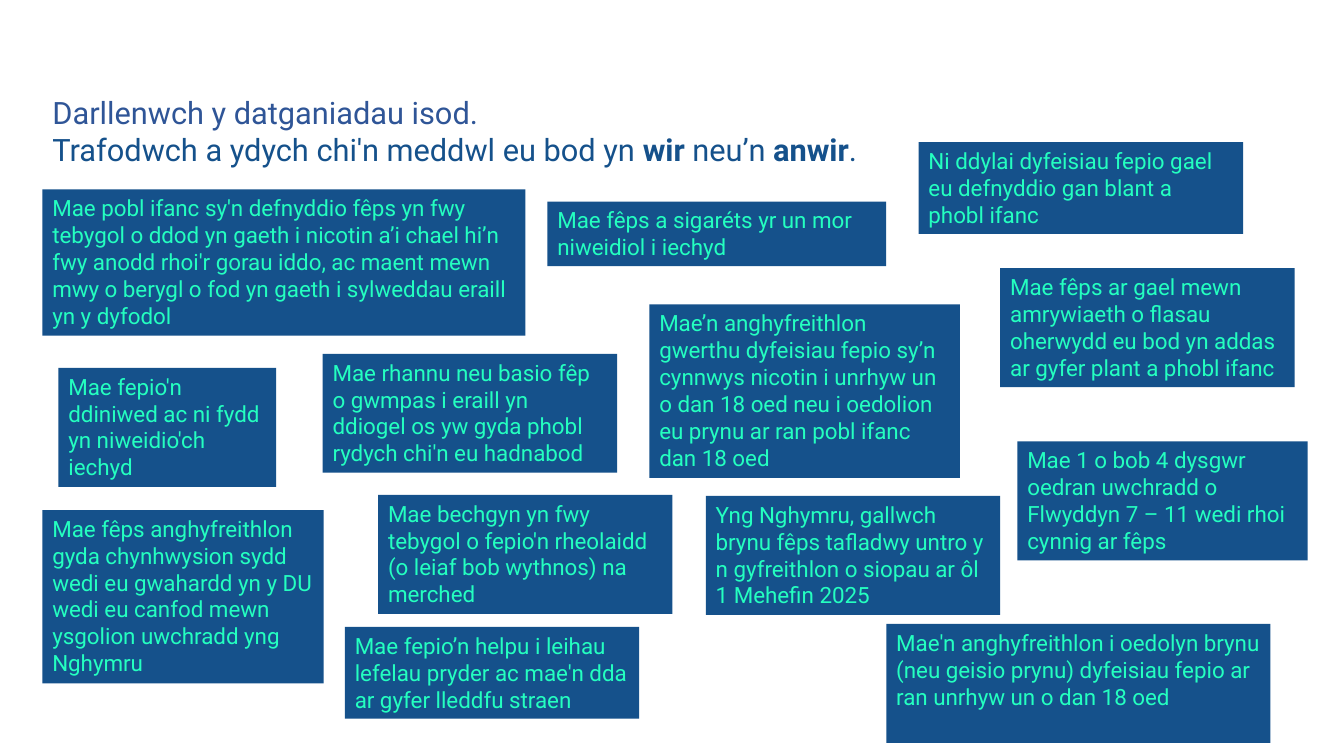
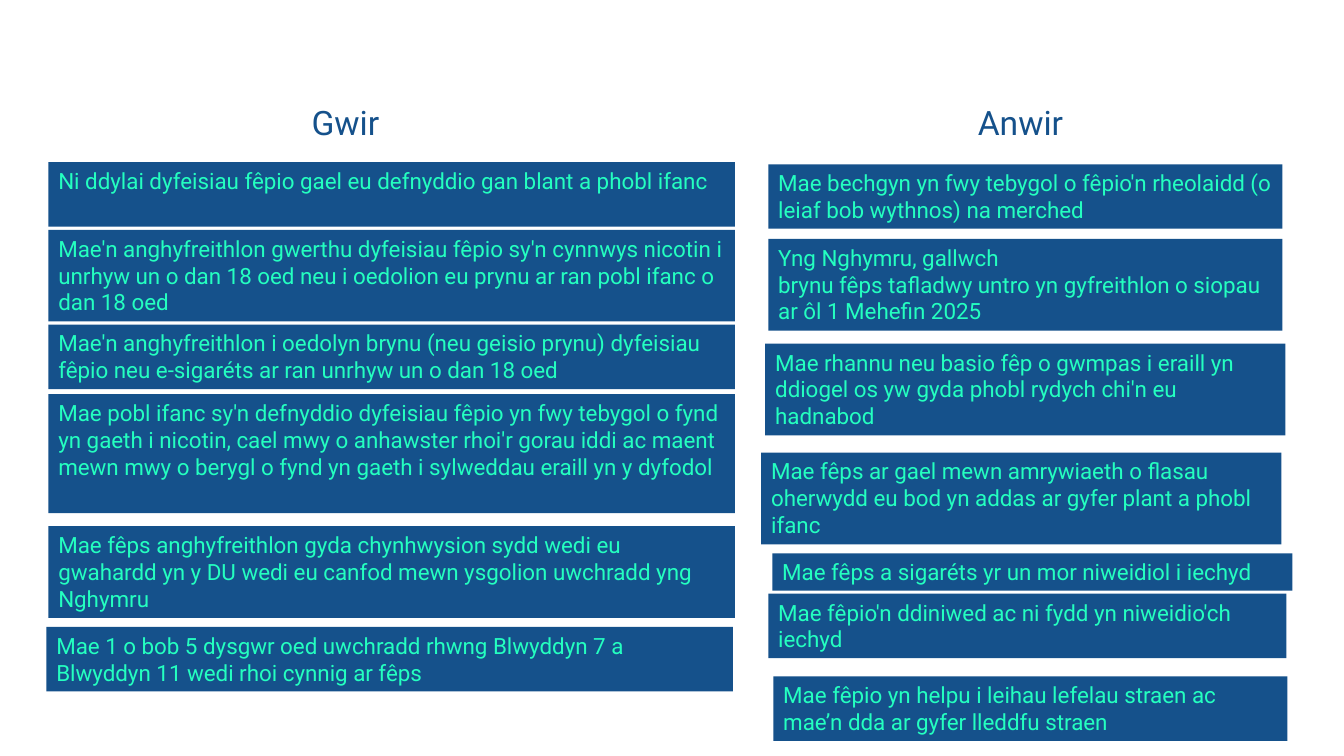
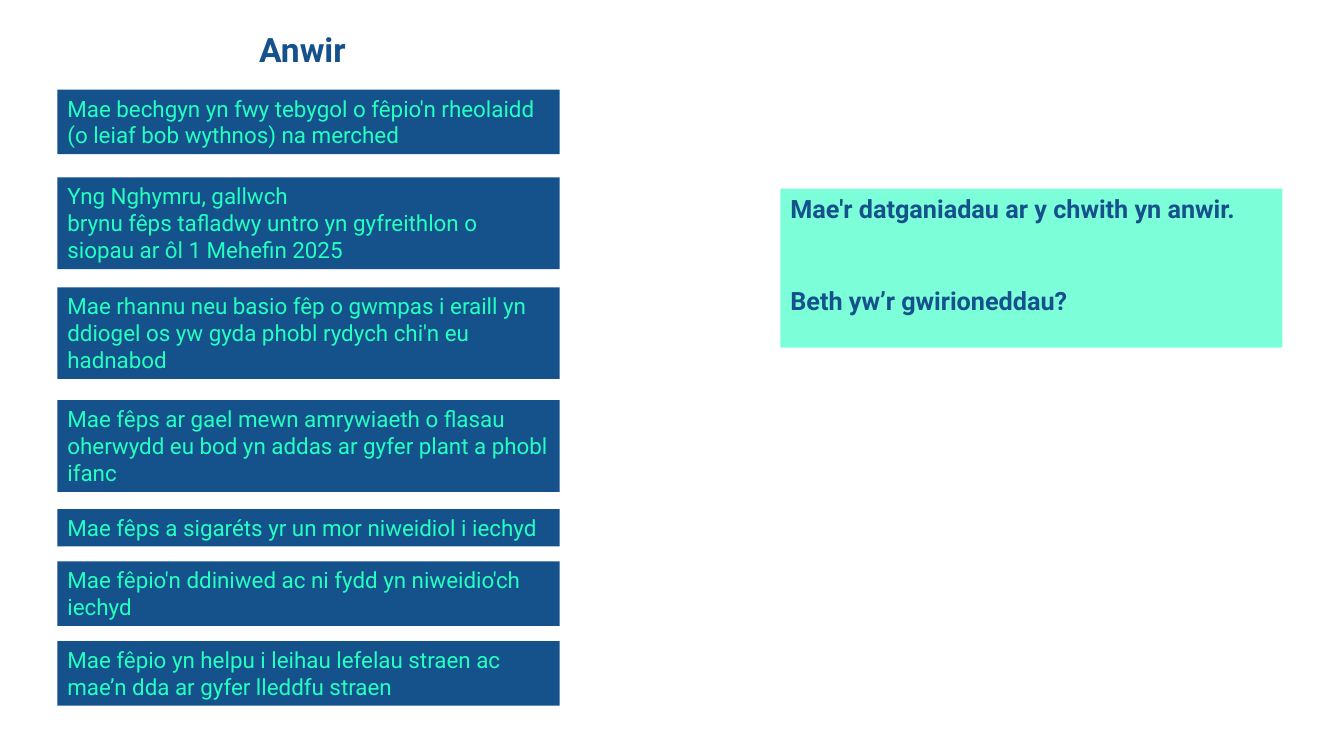
from pptx import Presentation
from pptx.dml.color import RGBColor
from pptx.enum.shapes import MSO_SHAPE
from pptx.enum.text import MSO_ANCHOR, MSO_AUTO_SIZE, PP_ALIGN
from pptx.util import Inches, Pt

HUES = {"navy": "15518B", "blue": "2F5597", "mint": "24FFC0", "pale": "7CFFD9"}
FACE = "Roboto"
TIED = chr(160).join(["brynu", "fêps", "tafladwy", "untro", "yn"])

SAID = {
    "boys": "Mae bechgyn yn fwy tebygol o fêpio'n rheolaidd (o leiaf bob wythnos) na merched",
    "shop": f"Yng Nghymru, gallwch {TIED} gyfreithlon o siopau ar ôl 1 Mehefin 2025",
    "share": "Mae rhannu neu basio fêp o gwmpas i eraill yn ddiogel os yw gyda phobl rydych chi'n eu hadnabod",
    "taste": "Mae fêps ar gael mewn amrywiaeth o flasau oherwydd eu bod yn addas ar gyfer plant a phobl ifanc",
    "same": "Mae fêps a sigaréts yr un mor niweidiol i iechyd",
    "mild": "Mae fêpio'n ddiniwed ac ni fydd yn niweidio'ch iechyd",
    "calm": "Mae fêpio yn helpu i leihau lefelau straen ac mae’n dda ar gyfer lleddfu straen",
}
BANNED = "Mae fêps anghyfreithlon gyda chynhwysion sydd wedi eu gwahardd yn y DU wedi eu canfod mewn ysgolion uwchradd yng Nghymru"

MIXED = [
    (9.11, 1.41, 3.22, 3, "Ni ddylai dyfeisiau fepio gael eu defnyddio gan blant a phobl ifanc"),
    (6.44, 3.02, 3.08, 6, "Mae’n anghyfreithlon gwerthu dyfeisiau fepio sy’n cynnwys nicotin i unrhyw un o dan 18 oed neu i oedolion eu prynu ar ran pobl ifanc dan 18 oed"),
    (8.79, 6.19, 3.81, 4, "Mae'n anghyfreithlon i oedolyn brynu (neu geisio prynu) dyfeisiau fepio ar ran unrhyw un o dan 18 oed"),
    (0.42, 1.88, 4.79, 5, "Mae pobl ifanc sy'n defnyddio fêps yn fwy tebygol o ddod yn gaeth i nicotin a’i chael hi’n fwy anodd rhoi'r gorau iddo, ac maent mewn mwy o berygl o fod yn gaeth i sylweddau eraill yn y dyfodol"),
    (0.42, 5.06, 2.79, 6, BANNED),
    (10.09, 4.38, 2.88, 4, "Mae 1 o bob 4 dysgwr oedran uwchradd o Flwyddyn 7 – 11 wedi rhoi cynnig ar fêps"),
    (0.58, 3.65, 2.16, 4, "Mae fepio'n ddiniwed ac ni fydd yn niweidio'ch iechyd"),
    (9.92, 2.66, 2.92, 4, SAID["taste"]),
    (3.42, 6.22, 2.92, 3, "Mae fepio’n helpu i leihau lefelau pryder ac mae'n dda ar gyfer lleddfu straen"),
    (5.43, 2, 3.36, 2, SAID["same"]),
    (3.75, 4.91, 2.92, 4, "Mae bechgyn yn fwy tebygol o fepio'n rheolaidd (o leiaf bob wythnos) na merched"),
    (3.2, 3.51, 2.92, 4, SAID["share"]),
    (7, 4.92, 2.92, 4, SAID["shop"]),
]
TRUE = [
    (0.48, 1.61, 6.81, 2, "Ni ddylai dyfeisiau fêpio gael eu defnyddio gan blant a phobl ifanc"),
    (0.48, 2.28, 6.81, 3, "Mae'n anghyfreithlon gwerthu dyfeisiau fêpio sy'n cynnwys nicotin i unrhyw un o dan 18 oed neu i oedolion eu prynu ar ran pobl ifanc o dan 18 oed"),
    (0.48, 3.22, 6.81, 2, "Mae'n anghyfreithlon i oedolyn brynu (neu geisio prynu) dyfeisiau fêpio neu e-sigaréts ar ran unrhyw un o dan 18 oed"),
    (0.48, 3.91, 6.81, 4, "Mae pobl ifanc sy'n defnyddio dyfeisiau fêpio yn fwy tebygol o fynd yn gaeth i nicotin, cael mwy o anhawster rhoi'r gorau iddi ac maent mewn mwy o berygl o fynd yn gaeth i sylweddau eraill yn y dyfodol"),
    (0.48, 5.22, 6.81, 3, BANNED),
    (0.46, 6.22, 6.81, 2, "Mae 1 o bob 5 dysgwr oed uwchradd rhwng Blwyddyn 7 a Blwyddyn 11 wedi rhoi cynnig ar fêps"),
]
FALSE = [
    (7.62, 1.63, 5.1, 2, SAID["boys"]),
    (7.62, 2.37, 5.1, 3, SAID["shop"]),
    (7.59, 3.41, 5.16, 3, SAID["share"]),
    (7.55, 4.49, 5.16, 3, SAID["taste"]),
    (7.66, 5.49, 5.16, 1, SAID["same"]),
    (7.62, 5.89, 5.14, 2, SAID["mild"]),
    (7.67, 6.71, 5.1, 2, SAID["calm"]),
]
TOPS = [0.89, 1.76, 2.85, 3.97, 5.05, 5.57, 6.36]


def tint(hue):
    return RGBColor.from_string(HUES[hue])


def style(para, size, hue, bold=None):
    para.alignment = PP_ALIGN.LEFT
    font = para.font
    font.name, font.size, font.bold = FACE, Pt(size), bold
    font.color.rgb = tint(hue)


def setup(shape, anchor=MSO_ANCHOR.TOP):
    frame = shape.text_frame
    frame.word_wrap = True
    frame.auto_size = MSO_AUTO_SIZE.NONE
    frame.vertical_anchor = anchor
    return frame


def block(slide, box, hue):
    shape = slide.shapes.add_shape(MSO_SHAPE.RECTANGLE, *map(Inches, box))
    shape.shadow.inherit = False
    shape.fill.solid()
    shape.fill.fore_color.rgb = tint(hue)
    shape.line.fill.background()
    return setup(shape)


def cards(slide, rows):
    for left, top, width, lines, text in rows:
        frame = block(slide, (left, top, width, 0.1 + 0.27 * lines), "navy")
        frame.text = text
        style(frame.paragraphs[0], 16, "mint")


def start(deck):
    return deck.slides.add_slide(deck.slide_layouts[5])


def title(slide, box):
    shape = slide.shapes.title
    shape.left, shape.top, shape.width, shape.height = map(Inches, box)
    return setup(shape, MSO_ANCHOR.BOTTOM)


def head(frame, text, bold=None):
    frame.text = text
    style(frame.paragraphs[0], 24, "navy", bold)


def quiz(deck):
    slide = start(deck)
    frame = title(slide, (0.42, 1.27, 10.67, 0.44))
    frame.text = "Darllenwch y datganiadau isod."
    style(frame.paragraphs[0], 22, "blue")
    task = frame.add_paragraph()
    style(task, 22, "navy")
    parts = ["Trafodwch a ydych chi'n meddwl eu bod yn ", "wir", " neu’n ", "anwir", "."]
    for place, text in enumerate(parts):
        run = task.add_run()
        run.text = text
        run.font.bold = place % 2 == 1
    cards(slide, MIXED)


def answers(deck):
    slide = start(deck)
    head(title(slide, (2.99, 0.74, 1.78, 0.72)), "Gwir")
    shape = slide.shapes.add_textbox(*map(Inches, (9.6, 0.97, 1.46, 0.49)))
    head(setup(shape, MSO_ANCHOR.BOTTOM), "Anwir")
    cards(slide, TRUE + FALSE)


def facts(deck):
    slide = start(deck)
    head(title(slide, (2.47, 0.25, 1.46, 0.49)), "Anwir", True)
    cards(slide, [(0.57, top, 4.98, *row[3:]) for top, row in zip(TOPS, FALSE)])
    frame = block(slide, (7.74, 1.87, 4.98, 1.58), "pale")
    frame.text = "Mae'r datganiadau ar y chwith yn anwir.\nBeth yw’r gwirioneddau?"
    for para in frame.paragraphs:
        style(para, 18, "navy", True)
    frame.paragraphs[1].space_before = Pt(44)


def main():
    deck = Presentation()
    deck.slide_width, deck.slide_height = Inches(13.33), Inches(7.5)
    for build in (quiz, answers, facts):
        build(deck)
    deck.save("out.pptx")


if __name__ == "__main__":
    main()
